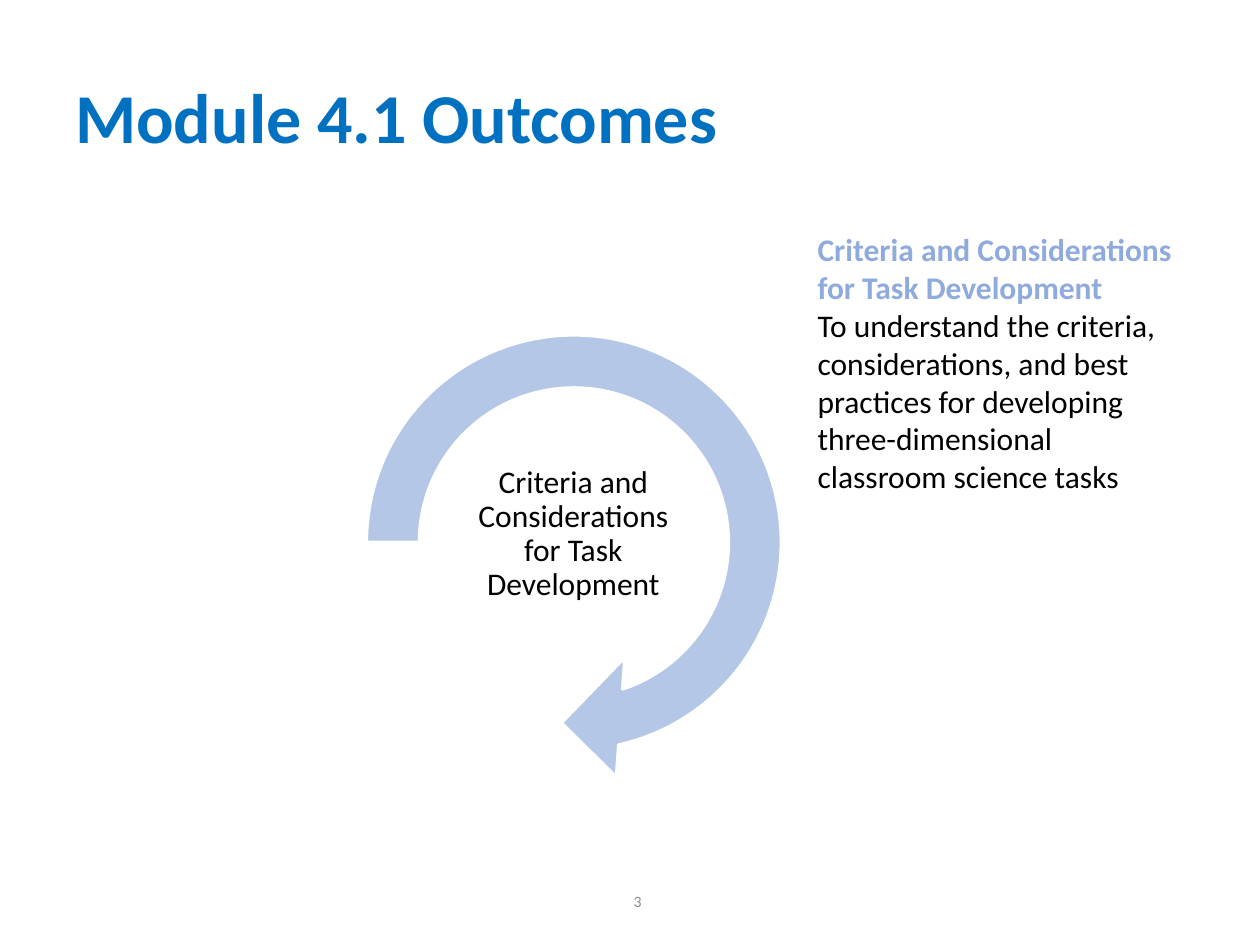
from pptx import Presentation
from pptx.dml.color import RGBColor
from pptx.enum.shapes import MSO_SHAPE
from pptx.enum.text import MSO_ANCHOR, PP_ALIGN
from pptx.util import Inches, Pt

LEFT, CENTER, RIGHT = PP_ALIGN.LEFT, PP_ALIGN.CENTER, PP_ALIGN.RIGHT
TOP, MIDDLE = MSO_ANCHOR.TOP, MSO_ANCHOR.MIDDLE
CIRCULAR_ARROW = MSO_SHAPE.CIRCULAR_ARROW

WHITE = RGBColor(0xFF, 0xFF, 0xFF)
BLACK = RGBColor(0, 0, 0)
BLUE = RGBColor(0x00, 0x70, 0xC0)
SOFT_BLUE = RGBColor(0x8F, 0xAA, 0xDC)
PALE_BLUE = RGBColor(0xB4, 0xC7, 0xE7)
GRAY = RGBColor(0x8C, 0x8C, 0x8C)

COLS, ROWS = 20, 15
TOPIC = "Criteria and Considerations for Task Development"
OUTCOME = ("To understand the criteria, considerations, and best practices "
           "for developing three-dimensional classroom science tasks")


class SlideBuilder:
    """Places elements on a grid of COLS by ROWS cells."""

    font = "Calibri"

    def __init__(self, prs):
        self.slide = prs.slides.add_slide(prs.slide_layouts[6])
        self.col = prs.slide_width / COLS
        self.row = prs.slide_height / ROWS

    def box(self, x, y, w, h):
        return (round(x * self.col), round(y * self.row),
                round(w * self.col), round(h * self.row))

    def text(self, cells, paragraphs, size, align=LEFT, anchor=TOP,
             spacing=1.0, inset=None):
        """Adds a text box; paragraphs holds (text, colour, bold) tuples."""
        tf = self.slide.shapes.add_textbox(*self.box(*cells)).text_frame
        tf.word_wrap = True
        tf.vertical_anchor = anchor
        if inset is not None:
            tf.margin_left = tf.margin_right = Inches(inset)
            tf.margin_top = tf.margin_bottom = Inches(inset)
        for i, (words, color, bold) in enumerate(paragraphs):
            p = tf.add_paragraph() if i else tf.paragraphs[0]
            p.text = words
            p.alignment = align
            p.line_spacing = spacing
            p.font.name = self.font
            p.font.size = Pt(size)
            p.font.bold = bold
            p.font.color.rgb = color

    def circular_arrow(self, cells, adjustments):
        s = self.slide.shapes.add_shape(CIRCULAR_ARROW, *self.box(*cells))
        for i, value in enumerate(adjustments):
            s.adjustments[i] = value
        s.shadow.inherit = False
        s.fill.solid()
        s.fill.fore_color.rgb = PALE_BLUE
        s.line.color.rgb = WHITE
        s.line.width = Pt(2)


def main():
    prs = Presentation()
    prs.slide_width, prs.slide_height = Inches(10), Inches(7.5)
    b = SlideBuilder(prs)
    b.text((1, 0.66, 18, 2.5), [("Module 4.1 Outcomes", BLUE, True)], 40,
           anchor=MIDDLE, spacing=0.9)
    b.circular_arrow((5.28, 4.78, 7.66, 7.66), (0.11, 11.42, 45, 108, 0.125))
    b.text((7.28, 7.2, 3.64, 2.56), [(TOPIC, BLACK, False)], 18,
           align=CENTER, anchor=MIDDLE, spacing=0.9, inset=0.01)
    b.text((12.78, 3.56, 6.22, 5.04),
           [(TOPIC, SOFT_BLUE, True), (OUTCOME, BLACK, False)], 18)
    b.text((5.88, 13.9, 4.5, 0.8), [("3", GRAY, False)], 9,
           align=RIGHT, anchor=MIDDLE)
    prs.save("out.pptx")


if __name__ == "__main__":
    main()
